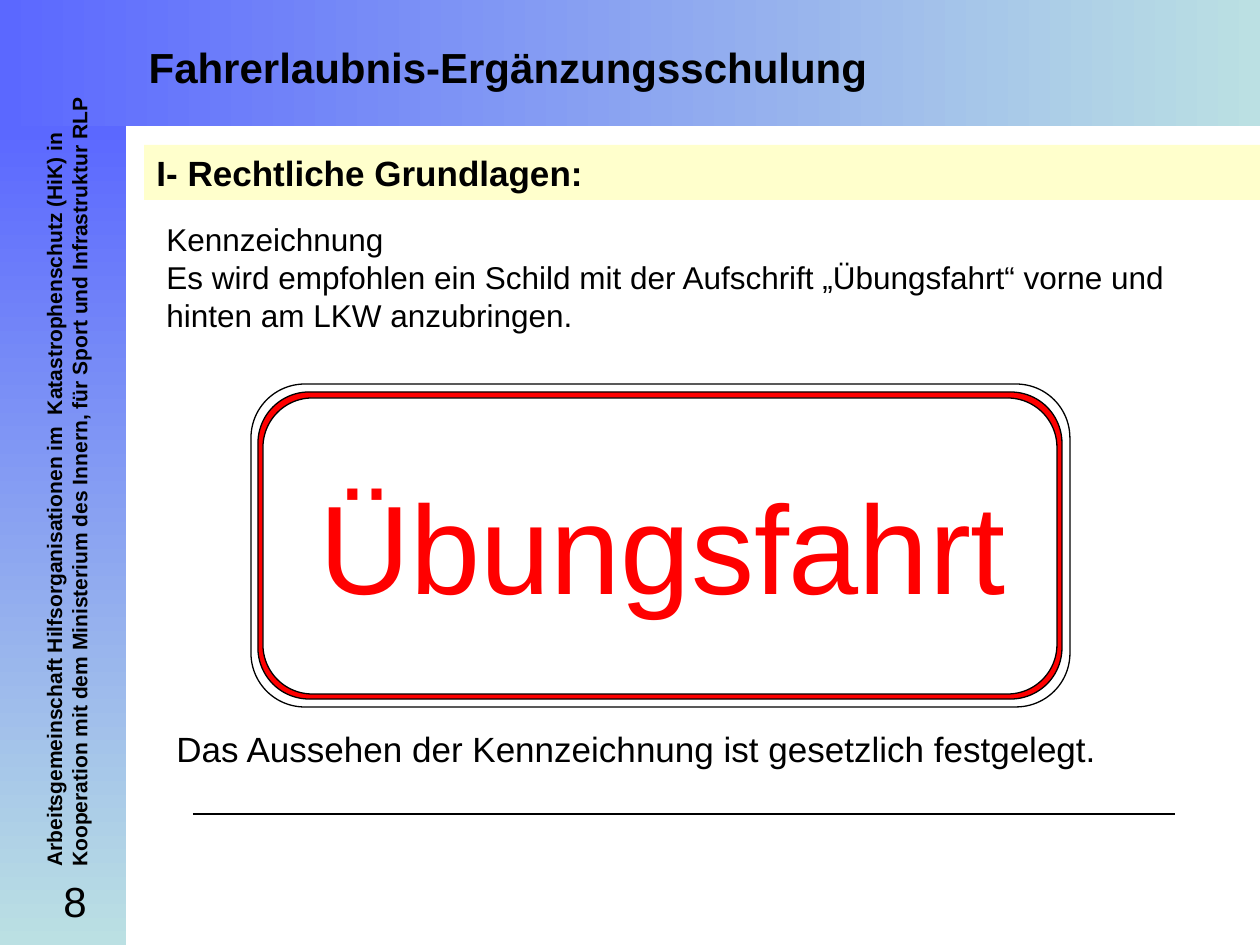
from lxml import etree
from pptx import Presentation
from pptx.dml.color import RGBColor
from pptx.enum import shapes, text
from pptx.oxml.ns import qn
from pptx.util import Emu, Pt

SCALE = 914400 / 126
BLACK, WHITE, RED = "000000", "FFFFFF", "FF0000"
BLUE, MINT, CREAM = "5B68FF", "BBE0E3", "FFFFCC"
RECT = shapes.MSO_SHAPE.RECTANGLE
ROUND = shapes.MSO_SHAPE.ROUNDED_RECTANGLE
LEFT, MID = text.PP_ALIGN.LEFT, text.PP_ALIGN.CENTER


def px(n):
    return Emu(round(n * SCALE))


def tint(code):
    return RGBColor.from_string(code)


class Deck:
    """Hold the style and the current slide, and draw each kind of element."""

    def __init__(self, wide, high, font="Arial"):
        self.font = font
        self.prs = Presentation()
        self.prs.slide_width, self.prs.slide_height = px(wide), px(high)
        self.slide = self.prs.slides.add_slide(self.prs.slide_layouts[5])

    def words(self, shape, lines, size, bold=False, color=BLACK, align=LEFT,
              anchor=text.MSO_ANCHOR.TOP):
        frame = shape.text_frame
        frame.word_wrap = True
        frame.auto_size = text.MSO_AUTO_SIZE.NONE
        frame.vertical_anchor = anchor
        for i, line in enumerate(lines):
            para = frame.add_paragraph() if i else frame.paragraphs[0]
            para.alignment = align
            run = para.add_run()
            run.text = line
            run.font.name, run.font.size = self.font, Pt(size)
            run.font.bold = bold
            run.font.color.rgb = tint(color)

    def title(self, box, line, size):
        shape = self.slide.shapes.title
        shape.left, shape.top, shape.width, shape.height = map(px, box)
        self.slide.shapes.element.append(shape.element)
        self.words(shape, [line], size, True, anchor=text.MSO_ANCHOR.MIDDLE)

    def label(self, box, lines, size, turn=0, **style):
        shape = self.slide.shapes.add_textbox(*map(px, box))
        shape.rotation = turn
        self.words(shape, lines, size, **style)

    def block(self, box, fill, kind=RECT, line=None):
        shape = self.slide.shapes.add_shape(kind, *map(px, box))
        shape.shadow.inherit = False
        shape.fill.solid()
        shape.fill.fore_color.rgb = tint(fill)
        if line:
            shape.line.color.rgb = tint(line)
            shape.line.width = Pt(0.75)
        else:
            shape.line.fill.background()
        return shape

    def band(self, box, start, end, angle):
        fill = self.block(box, start).fill
        fill.gradient()
        fill.gradient_angle = angle
        for stop, code, place in zip(fill.gradient_stops, (start, end), (0, 1)):
            stop.color.rgb = tint(code)
            stop.position = place

    def rule(self, x1, y1, x2, y2, width):
        line = self.slide.shapes.add_connector(
            shapes.MSO_CONNECTOR.STRAIGHT, *map(px, (x1, y1, x2, y2)))
        line.line.color.rgb = tint(BLACK)
        line.line.width = Pt(width)
        etree.SubElement(line.element.spPr, qn("a:effectLst"))


def main():
    deck = Deck(1260, 945)
    deck.band((0, 0, 1260, 126), BLUE, MINT, 0)
    deck.band((0, 126, 126, 819), BLUE, MINT, 270)
    deck.label((15, 869, 120, 63), ["8"], 24, align=MID)
    deck.label((-355, 426, 843, 63), [
        "Arbeitsgemeinschaft Hilfsorganisationen im  Katastrophenschutz (HiK) in "
        "Kooperation mit dem Ministerium des Innern, für Sport und "
        "Infrastruktur RLP"], 12, turn=270, bold=True)
    deck.title((136, 4, 1071, 126), "Fahrerlaubnis-Ergänzungsschulung", 24)

    head = deck.block((144, 145, 1116, 55), CREAM)
    deck.words(head, ["I- Rechtliche Grundlagen:"], 20, True,
               anchor=text.MSO_ANCHOR.MIDDLE)
    deck.rule(193, 814, 1175, 814, 1.5)
    deck.label((154, 214, 1076, 127), [
        "Kennzeichnung",
        "Es wird empfohlen ein Schild mit der Aufschrift „Übungsfahrt“ "
        "vorne und hinten am LKW anzubringen."], 18)

    for box, fill in (((251, 384, 819, 323), WHITE),
                      ((258, 392, 804, 307), RED),
                      ((263, 398, 794, 296), WHITE)):
        deck.block(box, fill, ROUND, BLACK)
    deck.label((281, 462, 764, 165), ["Übungsfahrt"], 72, color=RED, align=MID)
    deck.label((164, 721, 1076, 55),
               ["Das Aussehen der Kennzeichnung ist gesetzlich festgelegt."], 20)
    deck.prs.save("out.pptx")


if __name__ == "__main__":
    main()
